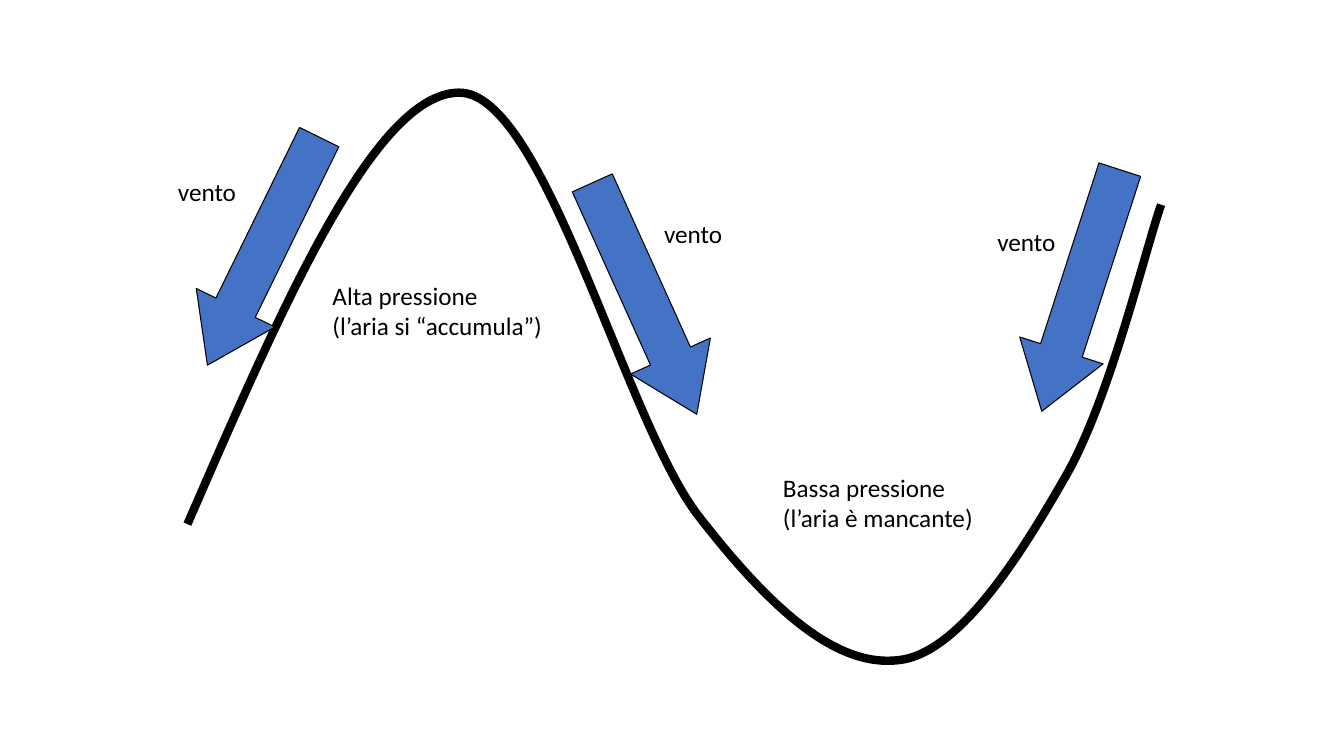
"""Draw a pressure wave with wind arrows and labels."""
from dataclasses import dataclass

from lxml import etree
from pptx import Presentation
from pptx.dml.color import RGBColor
from pptx.enum.shapes import MSO_SHAPE
from pptx.enum.text import MSO_AUTO_SIZE
from pptx.oxml.ns import qn
from pptx.util import Pt

DOWN_ARROW = MSO_SHAPE.DOWN_ARROW
FIT_SHAPE = MSO_AUTO_SIZE.SHAPE_TO_FIT_TEXT
BLACK, BLUE = "000000", "4472C4"
FONT = "Calibri"
ARROW_WIDTH, ARROW_HEIGHT = 62.6, 181.4


@dataclass
class Arrow:
    """A wind arrow, placed before rotation."""
    left: float
    top: float
    rotation: float


@dataclass
class Label:
    """A text box with one paragraph per line."""
    left: float
    top: float
    width: float
    height: float
    lines: list[str]


WAVE_START = (133.9, 374.4)
WAVE_CURVES = [
    [(200.9, 220.3), (267.1, 67), (327.6, 66.2)],
    [(388.8, 64.8), (446.4, 301), (499, 368.6)],
    [(551.5, 436.3), (597.6, 476.6), (641.5, 471.6)],
    [(685.4, 467.3), (730.1, 394.6), (761, 340.6)],
    [(792.7, 285.8), (817.9, 178.6), (829.4, 146.2)],
]
ARROWS = [
    Arrow(429.1, 122.6, 335.7),
    Arrow(156.8, 88.7, 26.1),
    Arrow(740.7, 116.8, 17.9),
]
LABELS = [
    Label(230.4, 196.4, 165.6, 50.9, ["Alta pressione", "(l’aria si “accumula”)"]),
    Label(552.2, 333.9, 151.9, 50.9, ["Bassa pressione", "(l’aria è mancante)"]),
    Label(120, 122.4, 58.3, 29.1, ["vento"]),
    Label(467.2, 152.6, 58.3, 29.1, ["vento"]),
    Label(705.3, 158.4, 58.3, 29.1, ["vento"]),
]


def color(value: str) -> RGBColor:
    """Turn a hex string into a colour."""
    return RGBColor.from_string(value)


def set_line(sp, width: float) -> None:
    """Give a shape a black outline and no shadow."""
    sp.shadow.inherit = False
    sp.line.color.rgb = color(BLACK)
    sp.line.width = Pt(width)


def add_wave(s) -> None:
    """Draw the pressure wave as one open outline of cubic curves."""
    builder = s.shapes.build_freeform(*map(Pt, WAVE_START))
    builder.add_line_segments(
        [(Pt(x), Pt(y)) for curve in WAVE_CURVES for x, y in curve], close=False)
    sp = builder.convert_to_shape()
    outline = next(sp.element.iter(qn("a:path")))
    segments = outline.findall(qn("a:lnTo"))
    for i in range(0, len(segments), 3):
        curve = etree.SubElement(outline, qn("a:cubicBezTo"))
        for segment in segments[i:i + 3]:
            curve.append(segment[0])
            outline.remove(segment)
    sp.fill.background()
    set_line(sp, 6)


def add_arrow(s, arrow: Arrow) -> None:
    """Draw one wind arrow."""
    sp = s.shapes.add_shape(DOWN_ARROW, Pt(arrow.left), Pt(arrow.top),
                            Pt(ARROW_WIDTH), Pt(ARROW_HEIGHT))
    sp.adjustments[1] = 0.73
    sp.rotation = arrow.rotation
    sp.fill.solid()
    sp.fill.fore_color.rgb = color(BLUE)
    set_line(sp, 0.75)


def add_label(s, label: Label) -> None:
    """Write one label."""
    sp = s.shapes.add_textbox(Pt(label.left), Pt(label.top),
                              Pt(label.width), Pt(label.height))
    tf = sp.text_frame
    tf.word_wrap = False
    tf.auto_size = FIT_SHAPE
    tf.text = "\n".join(label.lines)
    for p in tf.paragraphs:
        p.font.name = FONT
        p.font.size = Pt(18)
        p.font.color.rgb = color(BLACK)


def main() -> None:
    """Build and save the slide."""
    prs = Presentation()
    prs.slide_width, prs.slide_height = Pt(960), Pt(540)
    s = prs.slides.add_slide(prs.slide_layouts[6])
    add_wave(s)
    for arrow in ARROWS:
        add_arrow(s, arrow)
    for label in LABELS:
        add_label(s, label)
    prs.save("out.pptx")


if __name__ == "__main__":
    main()
